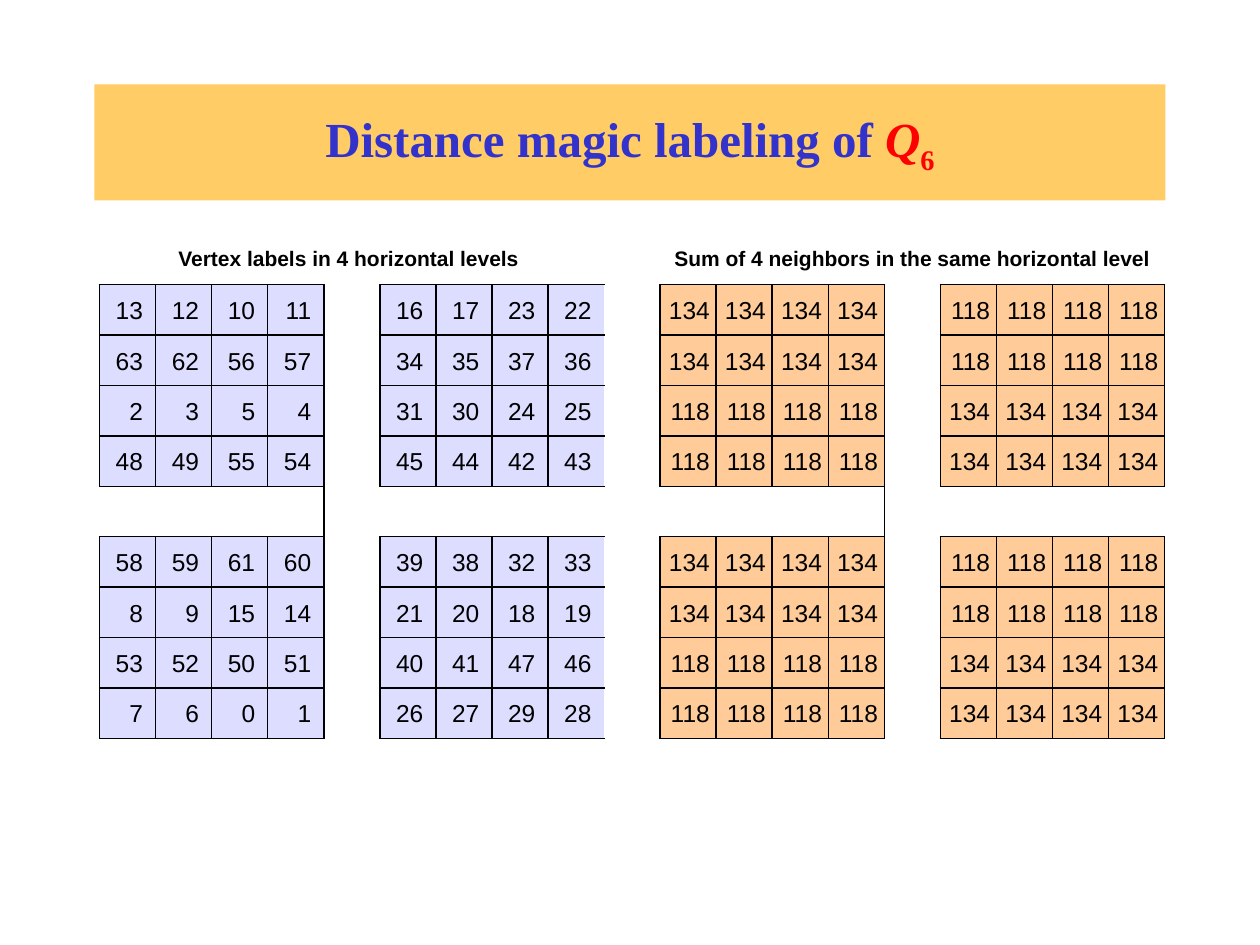
from lxml import etree
from pptx import Presentation
from pptx.dml.color import RGBColor
from pptx.enum.shapes import MSO_SHAPE
from pptx.enum.text import MSO_ANCHOR, PP_ALIGN
from pptx.oxml.ns import qn
from pptx.util import Inches, Pt

RECT = MSO_SHAPE.RECTANGLE
MIDDLE = MSO_ANCHOR.MIDDLE
CENTER, RIGHT = PP_ALIGN.CENTER, PP_ALIGN.RIGHT

COLORS = {"banner": "FFCC66", "title": "3333CC", "accent": "FF0000",
          "text": "000000", "line": "000000",
          "label": "DDDDFF", "sum": "FFCC99"}
TITLE = {"name": "Times New Roman", "size": Pt(28), "bold": True, "italic": False}
HEADING = {"name": "Arial", "size": Pt(12), "bold": True}
NUMBER = {"name": "Arial", "size": Pt(14), "bold": False}

# Vertex labels: two blocks side by side, four rows per horizontal level
LABELS = [
    [13, 12, 10, 11, 16, 17, 23, 22],
    [63, 62, 56, 57, 34, 35, 37, 36],
    [2, 3, 5, 4, 31, 30, 24, 25],
    [48, 49, 55, 54, 45, 44, 42, 43],
    [58, 59, 61, 60, 39, 38, 32, 33],
    [8, 9, 15, 14, 21, 20, 18, 19],
    [53, 52, 50, 51, 40, 41, 47, 46],
    [7, 6, 0, 1, 26, 27, 29, 28],
]
HIGH, LOW = 134, 118
BLOCK = 4                 # cells along one side of a block
STEP = BLOCK + 1          # block plus its gap
HALF = 2 * STEP           # columns from the labels to the sums
ROWS, COLS = 2 * STEP, 4 * STEP - 1
CELL_W, CELL_H = 8.46 / COLS, 0.4


class Deck:
    def __init__(self):
        self.prs = Presentation()
        self.prs.slide_width, self.prs.slide_height = Inches(10), Inches(7.5)
        self.s = self.prs.slides.add_slide(self.prs.slide_layouts[6])

    def run(self, p, text, style, color="text"):
        r = p.add_run()
        r.text = text
        for name, value in style.items():
            setattr(r.font, name, value)
        r.font.color.rgb = RGBColor.from_string(COLORS[color])
        return r

    def banner(self, left, top, width, height, parts):
        sp = self.s.shapes.add_shape(RECT, Inches(left), Inches(top),
                                     Inches(width), Inches(height))
        sp.shadow.inherit = False
        sp.fill.solid()
        sp.fill.fore_color.rgb = RGBColor.from_string(COLORS["banner"])
        sp.line.fill.background()
        tf = sp.text_frame
        tf.word_wrap, tf.vertical_anchor = True, MIDDLE
        p = tf.paragraphs[0]
        p.alignment = CENTER
        return [self.run(p, *part) for part in parts]

    def table(self, left, top):
        frame = self.s.shapes.add_table(ROWS, COLS, Inches(left), Inches(top),
                                        Inches(CELL_W * COLS), Inches(CELL_H * ROWS))
        tbl = frame.table
        tbl.first_row = tbl.horz_banding = False
        for col in tbl.columns:
            col.width = Inches(CELL_W)
        for row in tbl.rows:
            row.height = Inches(CELL_H)
        return tbl

    def borders(self, cell, sides):
        tc_pr = cell._tc.get_or_add_tcPr()
        for side in "LRTB":
            ln = etree.SubElement(tc_pr, qn("a:ln" + side), w=str(Pt(1)))
            if side in sides:
                fill = etree.SubElement(ln, qn("a:solidFill"))
                etree.SubElement(fill, qn("a:srgbClr"), val=COLORS["line"])
            else:
                etree.SubElement(ln, qn("a:noFill"))

    def cell(self, cell, text, style, align, fill=None, sides="LRTB", right=0.05):
        margins = {"margin_left": 0.05, "margin_top": 0.1,
                   "margin_right": right, "margin_bottom": 0.05}
        for name, value in margins.items():
            setattr(cell, name, Inches(value))
        self.borders(cell, sides)
        if fill:
            cell.fill.solid()
            cell.fill.fore_color.rgb = RGBColor.from_string(COLORS[fill])
        else:
            cell.fill.background()
        p = cell.text_frame.paragraphs[0]
        p.alignment = align
        self.run(p, text, style)

    def merged(self, tbl, row, col, height, width, sides="", text="", right=0.05):
        """Merge a range without fill; the first cell may hold a heading."""
        for i in range(row, row + height):
            for j in range(col, col + width):
                cell = tbl.cell(i, j)
                if text and (i, j) == (row, col):
                    self.cell(cell, text, HEADING, CENTER, None, sides, right)
                else:
                    cell.margin_top = cell.margin_bottom = 0
                    self.borders(cell, sides)
                    cell.fill.background()
        tbl.cell(row, col).merge(tbl.cell(row + height - 1, col + width - 1))


def main():
    deck = Deck()

    # Title
    *_, subscript = deck.banner(0.75, 0.67, 8.5, 0.92, [
        ("Distance magic labeling of ", TITLE, "title"),
        ("Q", {**TITLE, "italic": True}, "accent"),
        ("6", TITLE, "accent")])
    subscript.font._element.set("baseline", "-25000")

    tbl = deck.table(0.79, 1.86)

    # Headings and the gaps between blocks
    deck.merged(tbl, 0, 0, 1, HALF - 1, "B", "Vertex labels in 4 horizontal levels", 0.1)
    deck.merged(tbl, 0, HALF, 1, HALF - 1, "B",
                "Sum of 4 neighbors in the same horizontal level")
    deck.merged(tbl, 0, HALF - 1, ROWS, 1)
    for col in (STEP - 1, HALF + STEP - 1):
        deck.merged(tbl, 1, col, ROWS - 1, 1, "LR")
    for col in range(0, COLS, STEP):
        deck.merged(tbl, STEP, col, 1, BLOCK, "TB")

    # Labels on the left, sums on the right
    for i, labels in enumerate(LABELS):
        row = 1 + i + i // BLOCK
        upper = i % BLOCK < BLOCK // 2
        for j, label in enumerate(labels):
            col = j + j // BLOCK
            total = HIGH if upper == (j < BLOCK) else LOW
            deck.cell(tbl.cell(row, col), str(label), NUMBER, RIGHT, "label", right=0.1)
            deck.cell(tbl.cell(row, HALF + col), str(total), NUMBER, RIGHT, "sum")

    deck.prs.save("out.pptx")


if __name__ == "__main__":
    main()
